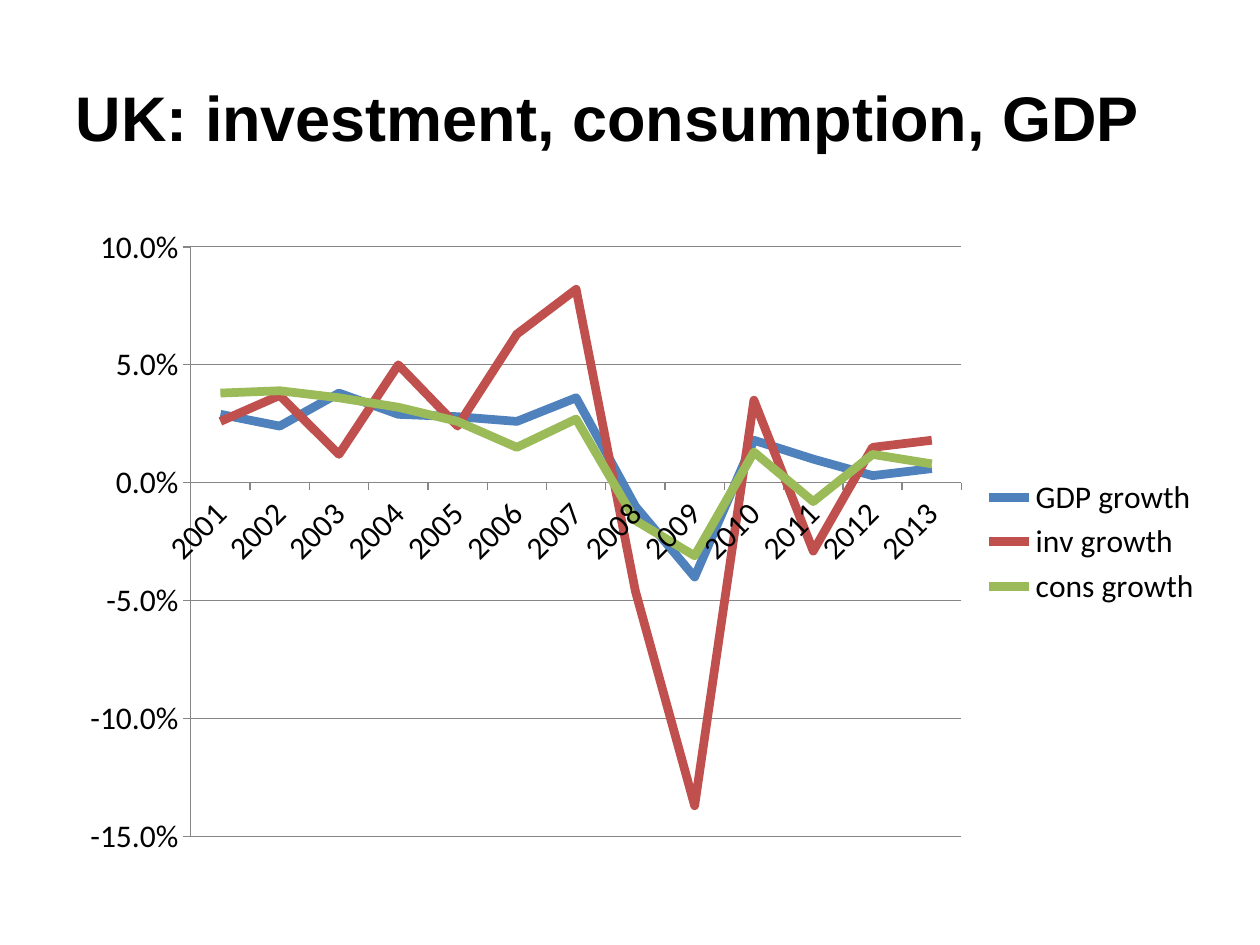
from lxml import etree
from pptx import Presentation
from pptx.chart.data import CategoryChartData
from pptx.dml.color import RGBColor
from pptx.enum.chart import XL_CHART_TYPE as ChartType, XL_LEGEND_POSITION as LegendPos
from pptx.enum.chart import XL_MARKER_STYLE as Marker, XL_TICK_MARK as Tick
from pptx.enum.text import MSO_ANCHOR as Anchor, PP_ALIGN as Align
from pptx.oxml import parse_xml
from pptx.oxml.ns import nsdecls, qn
from pptx.util import Inches, Pt

COLORS = {
    "text": "000000",
    "axis": "868686",
    "GDP growth": "4F81BD",
    "inv growth": "C0504D",
    "cons growth": "9BBB59",
}
YEARS = [str(year) for year in range(2001, 2014)]
GROWTH = {
    "GDP growth": [0.029, 0.024, 0.038, 0.029, 0.028, 0.026, 0.036,
                   -0.01, -0.04, 0.018, 0.01, 0.003, 0.006],
    "inv growth": [0.026, 0.037, 0.012, 0.05, 0.024, 0.063, 0.082,
                   -0.046, -0.137, 0.035, -0.029, 0.015, 0.018],
    "cons growth": [0.038, 0.039, 0.036, 0.032, 0.026, 0.015, 0.027,
                    -0.016, -0.031, 0.013, -0.008, 0.012, 0.008],
}


def rgb(name):
    return RGBColor.from_string(COLORS[name])


def format_font(font, size, name, color="text", bold=False):
    font.size = Pt(size)
    font.name = name
    font.bold = bold
    font.color.rgb = rgb(color)


def write_text(tf, text, size=36, name="Arial", bold=True, align=Align.LEFT):
    tf.word_wrap = True
    tf.vertical_anchor = Anchor.MIDDLE
    p = tf.paragraphs[0]
    p.alignment = align
    r = p.add_run()
    r.text = text
    format_font(r.font, size, name, bold=bold)


def add_title(s, text):
    sp = s.shapes.title
    sp.left, sp.top = Inches(0.5), Inches(0.3)
    sp.width, sp.height = Inches(9), Inches(1.25)
    write_text(sp.text_frame, text)


def format_line(line, color, width):
    line.color.rgb = rgb(color)
    line.width = Pt(width)


def format_axis(axis):
    axis.major_tick_mark = Tick.OUTSIDE
    axis.minor_tick_mark = Tick.NONE
    format_line(axis.format.line, "axis", 0.75)
    format_font(axis.tick_labels.font, 18, "Calibri")


def rotate_labels(chart, degrees):
    axis = chart._chartSpace.find(".//" + qn("c:catAx"))
    body = axis.find(f"{qn('c:txPr')}/{qn('a:bodyPr')}")
    body.set("rot", str(degrees * 60000))
    body.set("vert", "horz")


def place_plot(chart, x, y, w, h):
    area = chart._chartSpace.find(".//" + qn("c:plotArea"))
    for old in area.findall(qn("c:layout")):
        area.remove(old)
    layout = parse_xml(f"<c:layout {nsdecls('c')}><c:manualLayout/></c:layout>")
    settings = [("layoutTarget", "inner"), ("xMode", "edge"), ("yMode", "edge"),
                ("x", x), ("y", y), ("w", w), ("h", h)]
    for tag, value in settings:
        etree.SubElement(layout[0], qn(f"c:{tag}")).set("val", str(value))
    area.insert(0, layout)


def add_growth_chart(s):
    data = CategoryChartData(number_format="0.0%")
    data.categories = YEARS
    for name, values in GROWTH.items():
        data.add_series(name, values)
    chart = s.shapes.add_chart(ChartType.LINE, Inches(0.51), Inches(1.7),
                               Inches(9.13), Inches(5.2), data).chart
    format_font(chart.font, 18, "Calibri")
    chart.has_title = False
    chart.has_legend = True
    chart.legend.position = LegendPos.RIGHT
    chart.legend.include_in_layout = False
    format_font(chart.legend.font, 18, "Calibri")

    years, rates = chart.category_axis, chart.value_axis
    for axis in (years, rates):
        format_axis(axis)
    years.has_major_gridlines = False
    rotate_labels(chart, -45)
    rates.minimum_scale, rates.maximum_scale, rates.major_unit = -0.15, 0.1, 0.05
    rates.has_major_gridlines = True
    format_line(rates.major_gridlines.format.line, "axis", 0.75)
    rates.tick_labels.number_format = "0.0%"
    rates.tick_labels.number_format_is_linked = False

    plot = chart.plots[0]
    plot.vary_by_categories = False
    for series in plot.series:
        series.smooth = False
        series.marker.style = Marker.NONE
        format_line(series.format.line, series.name, 5)
    place_plot(chart, 0.11, 0.05, 0.67, 0.9)


def main():
    prs = Presentation()
    prs.slide_width, prs.slide_height = Inches(10), Inches(7.5)
    s = prs.slides.add_slide(prs.slide_layouts[5])
    add_growth_chart(s)
    add_title(s, "UK: investment, consumption, GDP")
    prs.save("out.pptx")


if __name__ == "__main__":
    main()
